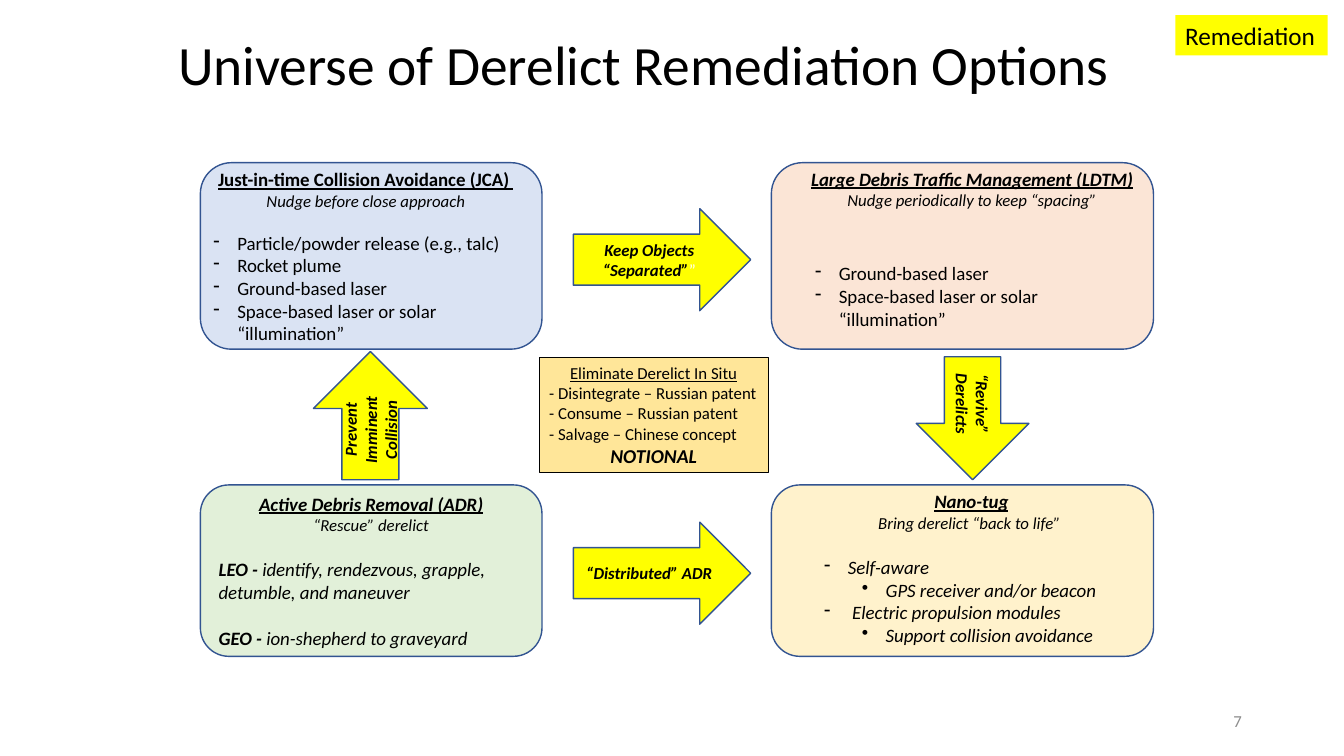
from dataclasses import dataclass

from lxml.etree import SubElement
from pptx import Presentation
from pptx.dml.color import RGBColor as Rgb
from pptx.enum.shapes import MSO_SHAPE as Shape
from pptx.enum.text import MSO_ANCHOR as Anchor, PP_ALIGN as Align
from pptx.oxml.ns import qn
from pptx.util import Cm, Pt


@dataclass(frozen=True)
class Theme:
    """Colours, font and type sizes of the slide."""
    font: str = "Calibri"
    ink: str = "000000"
    white: str = "FFFFFF"
    grey: str = "8C8C8C"
    outline: str = "325491"
    yellow: str = "FFFF00"
    blue: str = "DAE3F3"
    peach: str = "FBE5D6"
    green: str = "E2F0D9"
    cream: str = "FFF2CC"
    gold: str = "FFE699"
    title: float = 39.6
    tag: float = 18
    notional: float = 14
    body: float = 13.5
    small: float = 12


THEME = Theme()


@dataclass
class Line:
    """One paragraph, with an optional bold lead and white tail."""
    text: str
    size: float = THEME.body
    bold: bool = False
    italic: bool = False
    underline: bool = False
    align: Align = Align.LEFT
    before: float = 0
    bullet: str = ""
    level: int = 0
    lead: str = ""
    tail: str = ""
    color: str = THEME.ink
    spacing: float = 1


def heading(text, italic=True):
    """Return the underlined heading of an option."""
    return Line(text, bold=True, italic=italic, underline=True, align=Align.CENTER)


def motto(text):
    """Return the small italic line below a heading."""
    return Line(text, THEME.small, italic=True, align=Align.CENTER)


def label(text, tail=""):
    """Return the caption of an arrow."""
    return Line(text, THEME.small, bold=True, italic=True, align=Align.CENTER, tail=tail)


class OptionsSlide:
    """Draws the elements of the slide in one theme."""

    def __init__(self, slide, theme):
        """Keep the slide and its theme."""
        self.slide, self.theme = slide, theme

    def set_lines(self, frame, lines, anchor=Anchor.TOP, wrap=True):
        """Fill a text frame with lines."""
        frame.word_wrap, frame.vertical_anchor = wrap, anchor
        for index, line in enumerate(lines):
            paragraph = frame.add_paragraph() if index else frame.paragraphs[0]
            paragraph.alignment, paragraph.level = line.align, line.level
            paragraph.line_spacing = line.spacing
            paragraph.space_before = Pt(line.before)
            if line.bullet:
                self.bullet(paragraph, line)
            font = paragraph.font
            font.name, font.size = self.theme.font, Pt(line.size)
            font.bold, font.italic, font.underline = line.bold, line.italic, line.underline
            font.color.rgb = Rgb.from_string(line.color)
            if line.lead:
                lead = paragraph.add_run()
                lead.text, lead.font.bold = line.lead, True
            paragraph.add_run().text = line.text
            if line.tail:
                tail = paragraph.add_run()
                tail.text, tail.font.bold, tail.font.italic = line.tail, False, False
                tail.font.color.rgb = Rgb.from_string(self.theme.white)

    def bullet(self, paragraph, line):
        """Give a paragraph a hanging bullet."""
        properties = paragraph._p.get_or_add_pPr()
        properties.set("marL", str(Cm(0.6 + 0.95 * line.level)))
        properties.set("indent", str(-Cm(0.6)))
        SubElement(properties, qn("a:buChar")).set("char", line.bullet)

    def text(self, box, lines, anchor=Anchor.TOP, wrap=True, fill=None):
        """Add a text box."""
        area = self.slide.shapes.add_textbox(*map(Cm, box))
        if fill:
            area.fill.solid()
            area.fill.fore_color.rgb = Rgb.from_string(fill)
        self.set_lines(area.text_frame, lines, anchor, wrap)

    def shape(self, kind, box, fill, lines=(), anchor=Anchor.MIDDLE, outline=None, width=1):
        """Add a filled and outlined shape."""
        figure = self.slide.shapes.add_shape(kind, *map(Cm, box))
        figure.shadow.inherit = False
        figure.fill.solid()
        figure.fill.fore_color.rgb = Rgb.from_string(fill)
        figure.line.color.rgb = Rgb.from_string(outline or self.theme.outline)
        figure.line.width = Pt(width)
        self.set_lines(figure.text_frame, lines, anchor)
        return figure

    def option(self, box, fill, lines=()):
        """Add the rounded panel of an option."""
        self.shape(Shape.ROUNDED_RECTANGLE, box, fill, lines)

    def across(self, top, caption):
        """Add an arrow from the left to the right column."""
        self.shape(Shape.RIGHT_ARROW, (14.45, top, 4.47, 2.57), self.theme.yellow, [caption])

    def between(self, box, caption, upward=False):
        """Add a vertical arrow between the rows."""
        arrow = self.shape(Shape.DOWN_ARROW, box, self.theme.yellow, [caption])
        arrow.text_frame._txBody.bodyPr.set("vert", "vert")
        if upward:
            arrow._element.spPr.find(qn("a:xfrm")).set("flipV", "1")


def main():
    """Build and save the slide."""
    deck = Presentation()
    deck.slide_width, deck.slide_height = Cm(33.87), Cm(19.05)
    page = OptionsSlide(deck.slides.add_slide(deck.slide_layouts[6]), THEME)
    body_gap, small_gap = 16.5, 14.65
    left, left_width = 5.05, 8.61
    right, right_width = 19.44, 9.63
    upper, upper_height = 4.1, 4.7
    lower, lower_height = 12.22, 4.32

    page.option((left, upper, left_width, upper_height), THEME.blue)
    page.option((right, upper, right_width, upper_height), THEME.peach)
    page.option((right, lower, right_width, lower_height), THEME.cream)
    page.option((left, lower, left_width, lower_height), THEME.green, [
        heading("Active Debris Removal (ADR)"),
        motto("“Rescue” derelict"),
        Line("identify, rendezvous, grapple, detumble, and maneuver",
             italic=True, before=body_gap, lead="LEO - "),
        Line(" ion-shepherd to graveyard", italic=True, before=body_gap, lead="GEO -"),
    ])

    page.between((7.9, 8.86, 2.87, 3.23), label("Prevent Imminent Collision"), upward=True)
    page.between((23.09, 8.99, 2.84, 3.1), label("“Revive” Derelicts"))
    page.across(5.26, label("Keep Objects “Separated”", tail="”"))
    page.across(13.16, label("“Distributed” ADR"))

    page.text((5.13, 4.11, 8.18, 4.75), [
        heading("Just-in-time Collision Avoidance (JCA) ", italic=False),
        motto("Nudge before close approach"),
        Line("Particle/powder release (e.g., talc)", bullet="-", before=small_gap),
        Line("Rocket plume", bullet="-"),
        Line("Ground-based laser", bullet="-"),
        Line("Space-based laser or solar “illumination”", bullet="-"),
    ])
    page.text((20.17, 4.09, 8.66, 2.49), [
        heading("Large Debris Traffic Management (LDTM)"),
        motto("Nudge periodically to keep “spacing”"),
    ])
    page.text((20.29, 6.48, 8.41, 1.98), [
        Line("Ground-based laser", bullet="-"),
        Line("Space-based laser or solar “illumination”", bullet="-"),
    ])
    page.text((20.52, 12.22, 7.92, 4.24), [
        heading("Nano-tug"),
        motto("Bring derelict “back to life” "),
        Line("Self-aware", italic=True, bullet="-", before=body_gap),
        Line("GPS receiver and/or beacon", italic=True, bullet="•", level=1),
        Line(" Electric propulsion modules", italic=True, bullet="-"),
        Line("Support collision avoidance", italic=True, bullet="•", level=1),
    ])
    page.shape(Shape.RECTANGLE, (13.59, 9.02, 5.77, 2.9), THEME.gold, [
        Line("Eliminate Derelict In Situ", THEME.small, underline=True, align=Align.CENTER),
        Line("- Disintegrate – Russian patent", THEME.small),
        Line("- Consume – Russian patent", THEME.small),
        Line("- Salvage – Chinese concept", THEME.small),
        Line("NOTIONAL", THEME.notional, bold=True, italic=True, align=Align.CENTER),
    ], Anchor.TOP, THEME.ink, 0.75)

    page.text((4.24, 0.38, 25.2, 2.67),
              [Line("Universe of Derelict Remediation Options", THEME.title, spacing=0.9)],
              Anchor.MIDDLE)
    page.text((29.62, 0.38, 3.84, 1.02), [Line("Remediation", THEME.tag)],
              wrap=False, fill=THEME.yellow)
    page.text((23.93, 17.65, 7.62, 1.02),
              [Line("7", THEME.small, align=Align.RIGHT, color=THEME.grey)], Anchor.MIDDLE)
    deck.save("out.pptx")


if __name__ == "__main__":
    main()
